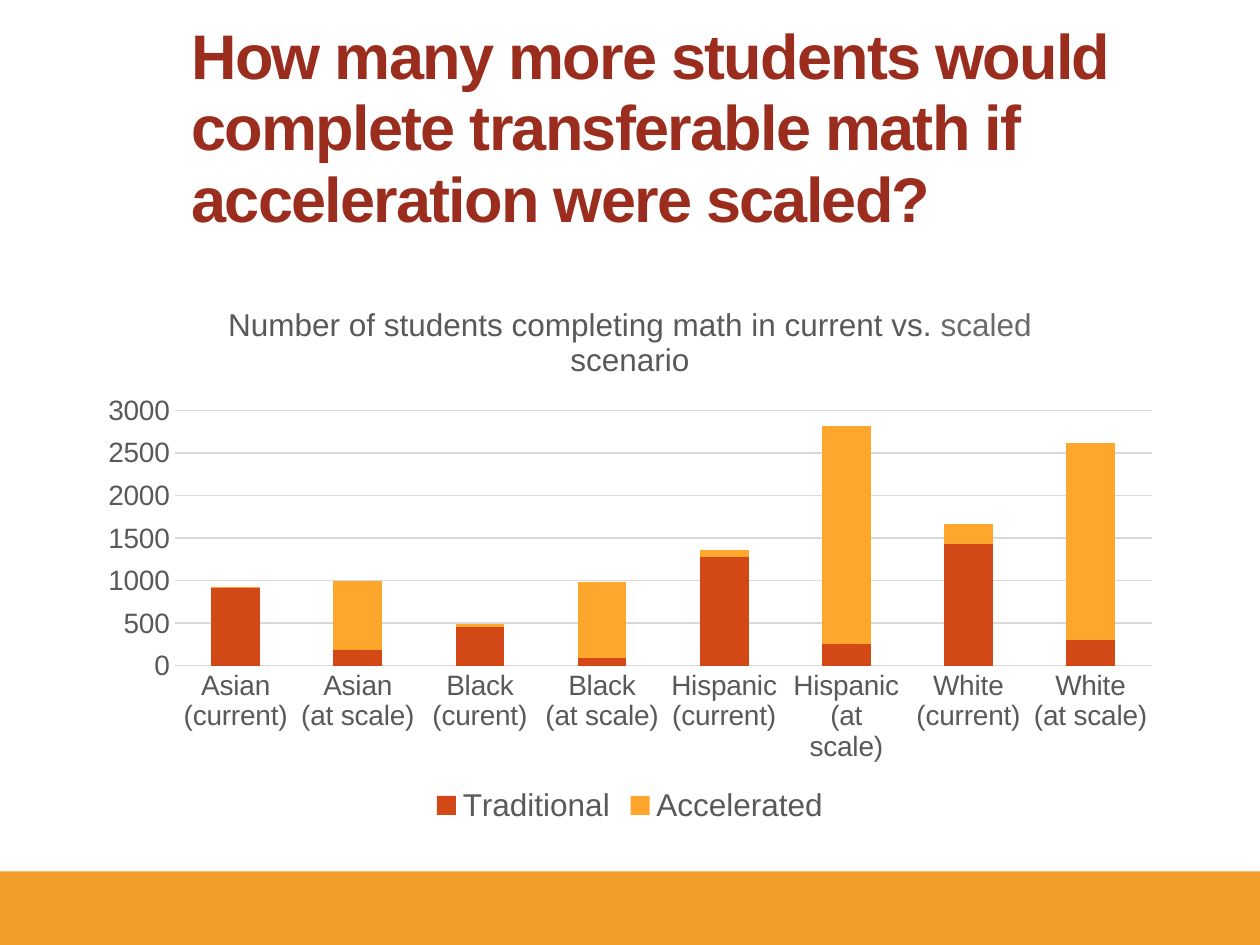
from pptx import Presentation
from pptx.chart.data import CategoryChartData
from pptx.dml.color import RGBColor
from pptx.enum.chart import XL_CHART_TYPE, XL_LEGEND_POSITION, XL_TICK_MARK
from pptx.enum.shapes import MSO_SHAPE
from pptx.enum.text import MSO_ANCHOR
from pptx.util import Pt

STACKED = XL_CHART_TYPE.COLUMN_STACKED
BOTTOM = XL_LEGEND_POSITION.BOTTOM
NO_TICK = XL_TICK_MARK.NONE
RECT = MSO_SHAPE.RECTANGLE
LOW = MSO_ANCHOR.BOTTOM

RUST = RGBColor(0x9B, 0x2D, 0x1F)
ORANGE = RGBColor(0xF0, 0x9D, 0x2A)
RED = RGBColor(0xD3, 0x48, 0x17)
AMBER = RGBColor(0xFF, 0xA6, 0x2C)
GRAY = RGBColor(0x59, 0x59, 0x59)
PALE = RGBColor(0x6A, 0x6A, 0x6A)
RULE = RGBColor(0xD9, 0xD9, 0xD9)
FACE = "Arial"

# Content
HEAD = ("How many more students would complete transferable math "
        "if acceleration were scaled?")
TITLE = [("Number of students completing math in current vs. ", GRAY),
         ("scaled", PALE), (" scenario", GRAY)]
CATS = ["Asian\n(current)", "Asian\n(at scale)",
        "Black\n(curent)", "Black\n(at scale)",
        "Hispanic\n(current)", "Hispanic\n(at\nscale)",
        "White\n(current)", "White\n(at scale)"]
SERIES = [
    ("Traditional", RED, [910, 180, 450, 90, 1280, 260, 1430, 300]),
    ("Accelerated", AMBER, [10, 810, 40, 890, 80, 2560, 240, 2320]),
]
WIDE, HIGH, BAND = 720, 540, 42


def style(font, size, color):
    font.name = FACE
    font.size = Pt(size)
    font.color.rgb = color


def rule(line):
    line.color.rgb = RULE
    line.width = Pt(0.75)


prs = Presentation()
prs.slide_width, prs.slide_height = Pt(WIDE), Pt(HIGH)
slide = prs.slides.add_slide(prs.slide_layouts[6])
shapes = slide.shapes

# Footer band
band = shapes.add_shape(RECT, 0, Pt(HIGH - BAND), Pt(WIDE), Pt(BAND))
band.shadow.inherit = False
band.fill.solid()
band.fill.fore_color.rgb = ORANGE
band.line.fill.background()

# Heading
box = shapes.add_textbox(Pt(102.4), Pt(36), Pt(582), Pt(102))
frame = box.text_frame
frame.word_wrap = True
frame.vertical_anchor = LOW
para = frame.paragraphs[0]
para.line_spacing = Pt(41)
run = para.add_run()
run.text = HEAD
style(para.font, 36, RUST)
para.font.bold = True
run.font._element.set("spc", "-100")

# Stacked chart
data = CategoryChartData(number_format="###0")
data.categories = CATS
for name, _, vals in SERIES:
    data.add_series(name, vals)
chart = shapes.add_chart(STACKED, Pt(49.5), Pt(162), Pt(621), Pt(312),
                         data).chart
style(chart.font, 10, RGBColor(0, 0, 0))

# Chart title
chart.has_title = True
para = chart.chart_title.text_frame.paragraphs[0]
style(para.font, 18, GRAY)
para.font.bold = False
for text, color in TITLE:
    run = para.add_run()
    run.text = text
    style(run.font, 18, color)
    run.font.bold = False
chart.chart_title.include_in_layout = False

# Columns
plot = chart.plots[0]
plot.gap_width, plot.overlap = 150, 100
plot.vary_by_categories = False
for bar, (_, color, _) in zip(plot.series, SERIES):
    bar.format.fill.solid()
    bar.format.fill.fore_color.rgb = color

# Axes
across, up = chart.category_axis, chart.value_axis
for axis in (across, up):
    axis.major_tick_mark = axis.minor_tick_mark = NO_TICK
    style(axis.tick_labels.font, 16, GRAY)
rule(across.format.line)
up.format.line.fill.background()
up.has_major_gridlines = True
rule(up.major_gridlines.format.line)
up.minimum_scale, up.maximum_scale, up.major_unit = 0, 3000, 500
up.tick_labels.number_format = "###0"
up.tick_labels.number_format_is_linked = False

# Legend
chart.has_legend = True
chart.legend.position = BOTTOM
chart.legend.include_in_layout = False
style(chart.legend.font, 18, GRAY)

prs.save("out.pptx")
